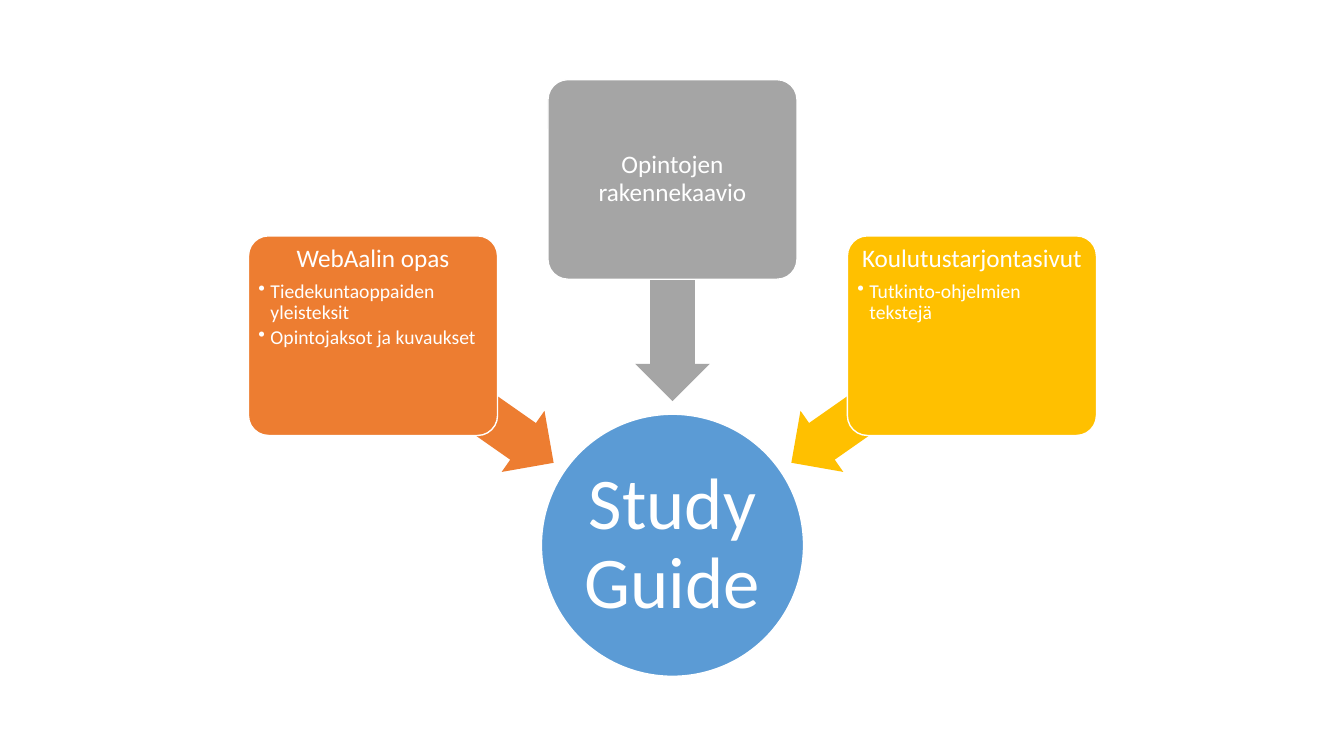
from lxml import etree
from pptx import Presentation
from pptx.dml.color import RGBColor
from pptx.enum import shapes, text
from pptx.oxml import ns
from pptx.util import Inches, Pt

CENTER_X = 6.67
BOX_W, BOX_H = 2.47, 1.98
ARROW_W, ARROW_H = 2.2, 0.74
HUB = 2.6
WHITE = "FFFFFF"

prs = Presentation()
prs.slide_width, prs.slide_height = Inches(13.33), Inches(7.5)
s = prs.slides.add_slide(prs.slide_layouts[6])


def add_shape(kind, center_x, top, width, height, color, outlined=True):
    sp = s.shapes.add_shape(kind, Inches(center_x - width / 2), Inches(top),
                            Inches(width), Inches(height))
    sp.shadow.inherit = False
    sp.fill.solid()
    sp.fill.fore_color.rgb = RGBColor.from_string(color)
    if outlined:
        sp.line.color.rgb = RGBColor.from_string(WHITE)
        sp.line.width = Pt(1)
    else:
        sp.line.fill.background()
    tf = sp.text_frame
    tf.word_wrap = True
    tf.margin_left = tf.margin_right = Inches(0.04)
    tf.margin_top = tf.margin_bottom = Inches(0.04)
    return sp


def write(p, words, size, space, align):
    p.text = words
    p.alignment = align
    p.line_spacing = 0.9
    p.space_after = Pt(size * space)
    p.font.size = Pt(size)
    p.font.name = "Calibri"
    p.font.color.rgb = RGBColor.from_string(WHITE)


hub = add_shape(shapes.MSO_SHAPE.OVAL, CENTER_X, 4.11, HUB, HUB, "5B9BD5")
hub.text_frame.vertical_anchor = text.MSO_ANCHOR.MIDDLE
write(hub.text_frame.paragraphs[0], "Study Guide", 52, 0.35, text.PP_ALIGN.CENTER)

sources = [
    (-1, 2.34, 3.59, 215, "ED7D31", "WebAalin opas",
     ["Tiedekuntaoppaiden yleisteksit", "Opintojaksot ja kuvaukset"]),
    (0, 0.79, 2.51, 270, "A5A5A5", "Opintojen rakennekaavio", []),
    (1, 2.34, 3.59, 325, "FFC000", "Koulutustarjontasivut",
     ["Tutkinto-ohjelmien tekstejä"]),
]

for side, box_top, arrow_top, angle, color, heading, items in sources:
    arrow = add_shape(shapes.MSO_SHAPE.LEFT_ARROW, CENTER_X + side * 2.08, arrow_top,
                      ARROW_W, ARROW_H, color, outlined=False)
    arrow.rotation = angle
    arrow.adjustments[0] = 0.6
    arrow.adjustments[1] = 0.5

    box = add_shape(shapes.MSO_SHAPE.ROUNDED_RECTANGLE, CENTER_X + side * 2.97, box_top,
                    BOX_W, BOX_H, color)
    box.adjustments[0] = 0.1
    tf = box.text_frame
    tf.vertical_anchor = text.MSO_ANCHOR.TOP if items else text.MSO_ANCHOR.MIDDLE
    write(tf.paragraphs[0], heading, 18, 0.35, text.PP_ALIGN.CENTER)
    for item in items:
        p = tf.add_paragraph()
        write(p, item, 14, 0.15, text.PP_ALIGN.LEFT)
        p.level = 1
        pPr = p._p.get_or_add_pPr()
        pPr.set("marL", str(Inches(0.12)))
        pPr.set("indent", str(-Inches(0.12)))
        bullet = etree.Element(ns.qn("a:buChar"), char="•")
        pPr.find(ns.qn("a:spcAft")).addnext(bullet)

prs.save("out.pptx")
